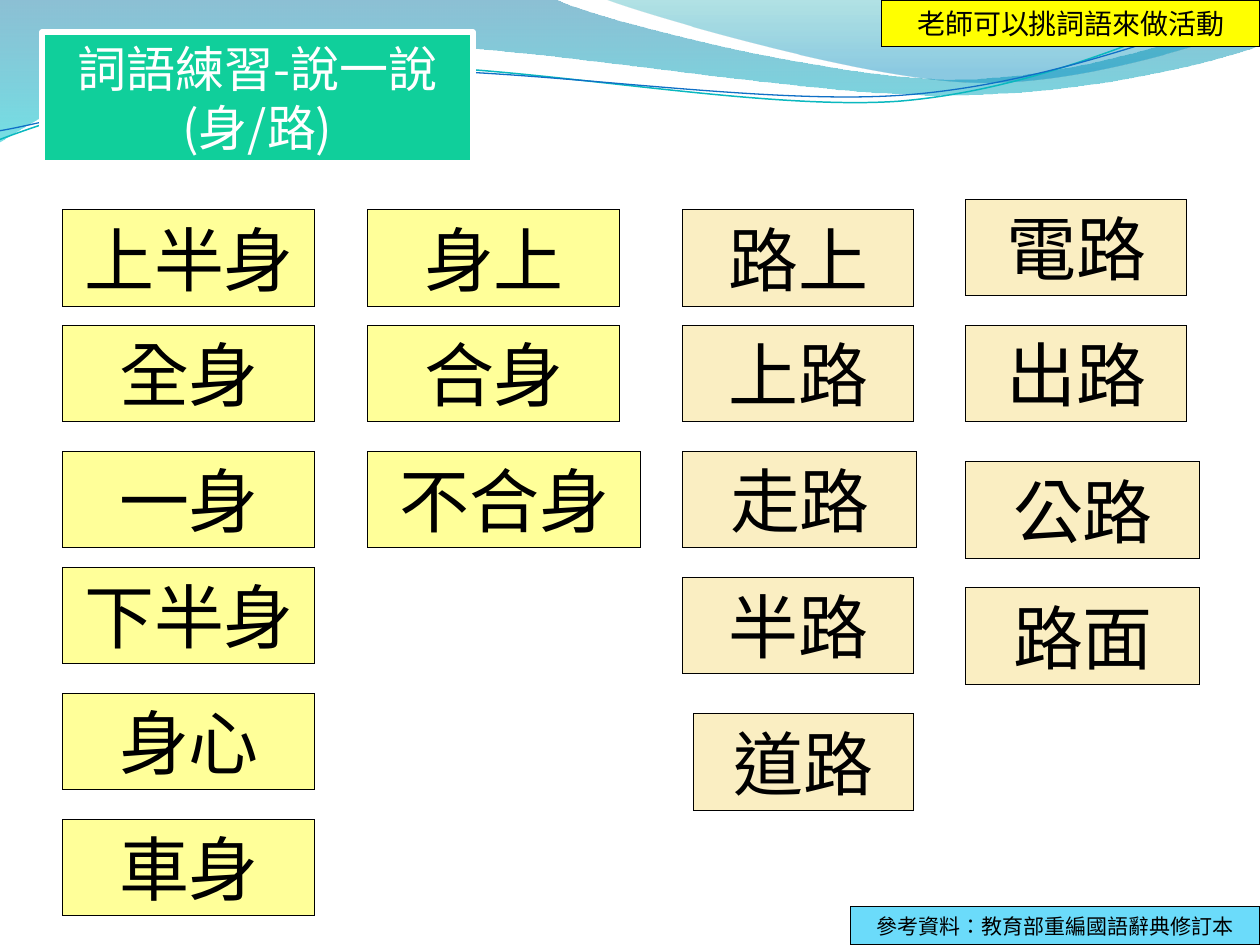
from lxml.etree import SubElement
from pptx import Presentation
from pptx.dml.color import RGBColor
from pptx.enum.shapes import MSO_SHAPE as Preset
from pptx.enum.text import MSO_ANCHOR as Anchor, MSO_AUTO_SIZE as AutoSize, PP_ALIGN as Align
from pptx.oxml.ns import qn
from pptx.util import Emu, Pt

PX = 914400 / 126


def px(length):
    return Emu(round(length * PX))


def color(value):
    return RGBColor.from_string(value)


class SlidePainter:
    font_name = "Noto Sans CJK SC"
    language = "zh-TW"
    ink = "000000"

    def __init__(self, slide):
        self.slide = slide

    def freeform(self, box, start, segments, close):
        """Segments hold one point for a line, three for a cubic curve."""
        left, top, width, height = box
        builder = self.slide.shapes.build_freeform(px(left), px(top), scale=1.0)
        builder.add_line_segments([(px(left + width), px(top + height))], close=False)
        shape = builder.convert_to_shape()
        shape.shadow.inherit = False
        outline = next(shape._element.iter(qn("a:path")))
        for step in list(outline):
            outline.remove(step)
        tags = {1: "a:lnTo", 3: "a:cubicBezTo"}
        steps = [("a:moveTo", [start])] + [(tags[len(points)], points) for points in segments]
        for tag, points in steps:
            step = SubElement(outline, qn(tag))
            for x, y in points:
                SubElement(step, qn("a:pt"), x=str(px(x - left)), y=str(px(y - top)))
        if close:
            SubElement(outline, qn("a:close"))
        return shape

    def wave(self, box, start, segments, stops):
        shape = self.freeform(box, start, segments, True)
        shape.line.fill.background()
        shape.fill.gradient()
        shape.fill.gradient_angle = 270
        for stop, (position, value, _) in zip(shape.fill.gradient_stops, stops):
            stop.position = position
            stop.color.rgb = color(value)
        values = shape._element.spPr.iter(qn("a:srgbClr"))
        for element, (_, _, opacity) in zip(values, stops):
            SubElement(element, qn("a:alpha"), val=str(opacity * 1000))

    def curve(self, box, start, segments, line, width):
        shape = self.freeform(box, start, segments, False)
        shape.rotation = 357.3
        shape.fill.background()
        shape.line.color.rgb = color(line)
        shape.line.width = Pt(width)

    def label(self, text, left, top, width, height, fill, size,
              ink=ink, line=ink, line_width=None):
        shape = self.slide.shapes.add_shape(
            Preset.RECTANGLE, px(left), px(top), px(width), px(height))
        # Without the theme style the outline stays a hairline
        shape._element.remove(shape._element.find(qn("p:style")))
        shape.fill.solid()
        shape.fill.fore_color.rgb = color(fill)
        shape.line.color.rgb = color(line)
        if line_width:
            shape.line.width = Pt(line_width)
        frame = shape.text_frame
        frame.word_wrap = True
        frame.auto_size = AutoSize.SHAPE_TO_FIT_TEXT
        frame.vertical_anchor = Anchor.TOP
        paragraph = frame.paragraphs[0]
        paragraph.text = text
        paragraph.alignment = Align.CENTER
        font = paragraph.font
        font.name, font.size = self.font_name, Pt(size)
        font.color.rgb = color(ink)
        font._element.set("lang", self.language)
        SubElement(font._element, qn("a:ea"), typeface=self.font_name)


def main():
    presentation = Presentation()
    presentation.slide_width, presentation.slide_height = px(1260), px(945)
    slide = presentation.slides.add_slide(presentation.slide_layouts[6])
    painter = SlidePainter(slide)

    # Waves along the top
    painter.wave((-1, -1, 1262, 143), (0, 0), [
        [(554, -1)],
        [(600, 21), (837, 79), (955, 79)],
        [(1075, 79), (1207, 33), (1260, 11)],
        [(1261, 45)],
        [(1239, 55), (1096, 96), (940, 95)],
        [(783, 95), (481, 35), (324, 43)],
        [(163, 45), (58, 105), (-1, 142)],
        [(0, 0)],
    ], [(0, "0074A1", 45), (1, "00C6CF", 55)])
    painter.wave((604, -1, 656, 88), (604, -1), [
        [(641, 14), (859, 78), (969, 82)],
        [(1079, 87), (1211, 40), (1260, 26)],
        [(1260, 0)],
        [(604, -1)],
    ], [(0, "00A1A9", 30), (0.8, "008BBF", 45)])

    # Thin curves, tilted as a whole
    painter.curve((-3, 28, 1263, 89), (-3, 110), [
        [(58, 90), (199, 52), (350, 53)],
        [(499, 53), (745, 117), (896, 114)],
        [(1049, 109), (1184, 45), (1260, 27)],
    ], "0AB8BF", 0.85)
    painter.curve((-2, 38, 1264, 73), (-2, 101), [
        [(57, 94), (207, 57), (357, 58)],
        [(509, 58), (750, 112), (902, 108)],
        [(1052, 104), (1188, 52), (1262, 38)],
    ], "0F6FC6", 0.75)

    # Title and notes
    painter.label("詞語練習-說一說(身/路)", 42, 32, 431, 131, "10CF9B", 28,
                  ink="FFFFFF", line="FFFFFF", line_width=3)
    painter.label("老師可以挑詞語來做活動", 882, 0, 378, 47, "FFFF00", 16)
    painter.label("參考資料：教育部重編國語辭典修訂本", 850, 907, 410, 38, "6BDBFA", 12)

    # Word cards: each column holds (word, left, top, width)
    body_words, road_words = "FFFF99", "FAEEC2"
    columns = [
        (body_words, [("上半身", 63, 210, 252), ("全身", 63, 325, 252),
                      ("一身", 63, 451, 252), ("下半身", 63, 567, 252),
                      ("身心", 63, 693, 252), ("車身", 63, 819, 252)]),
        (body_words, [("身上", 368, 210, 252), ("合身", 368, 325, 252),
                      ("不合身", 368, 451, 273)]),
        (road_words, [("路上", 683, 210, 231), ("上路", 683, 325, 231),
                      ("走路", 683, 451, 234), ("半路", 683, 577, 231),
                      ("道路", 693, 714, 221)]),
        (road_words, [("電路", 966, 199, 221), ("出路", 966, 325, 221),
                      ("公路", 966, 462, 234), ("路面", 966, 588, 234)]),
    ]
    for fill, cards in columns:
        for word, left, top, width in cards:
            painter.label(word, left, top, width, 97, fill, 40)

    presentation.save("out.pptx")


if __name__ == "__main__":
    main()
